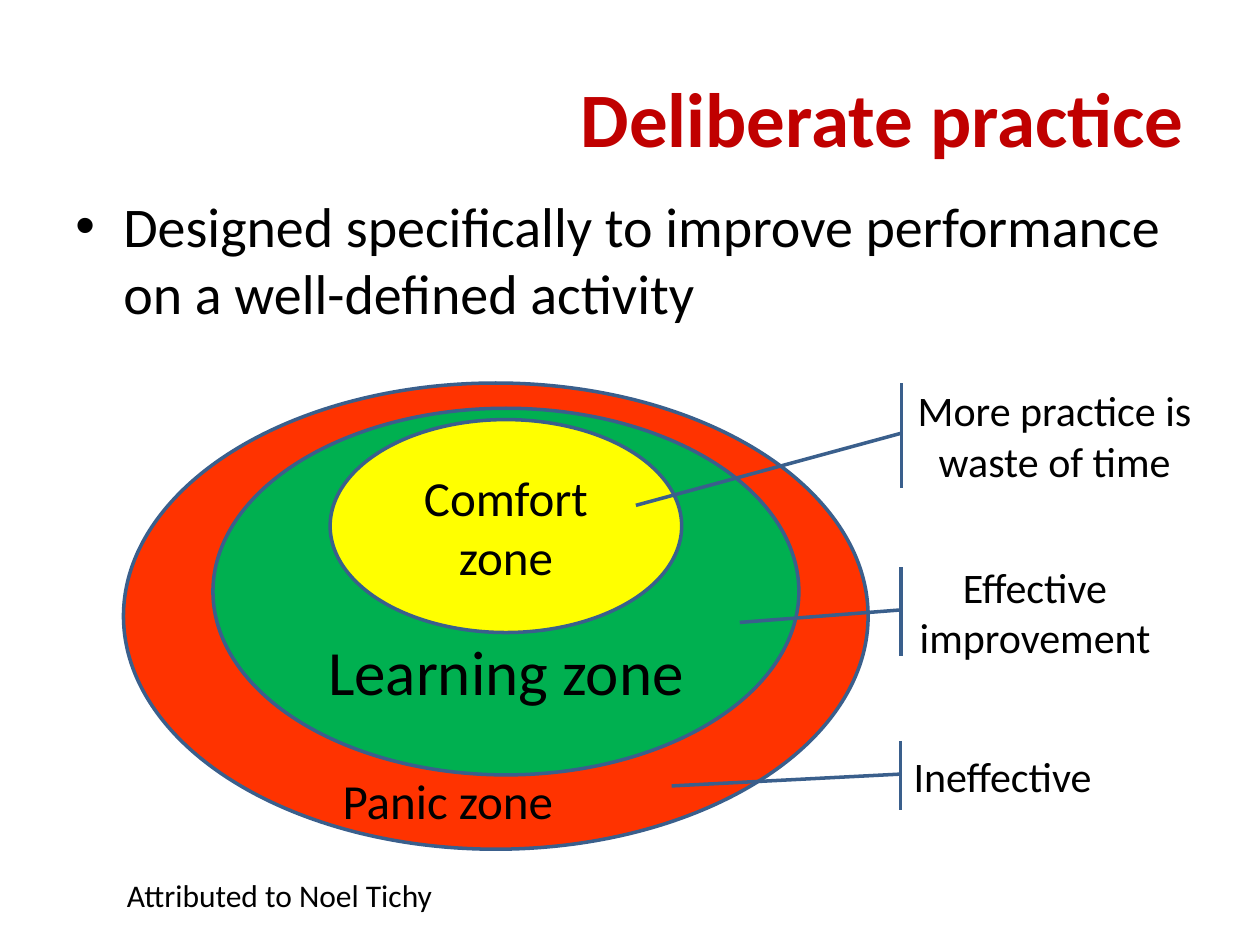
from lxml import etree
from pptx import Presentation
from pptx.dml.color import RGBColor
from pptx.enum.shapes import MSO_SHAPE
from pptx.enum.text import MSO_ANCHOR, PP_ALIGN
from pptx.oxml.ns import qn
from pptx.util import Inches, Pt

OVAL = MSO_SHAPE.OVAL
CALLOUT = MSO_SHAPE.LINE_CALLOUT_1_ACCENT_BAR
TOP, MIDDLE = MSO_ANCHOR.TOP, MSO_ANCHOR.MIDDLE
LEFT, CENTER, RIGHT = PP_ALIGN.LEFT, PP_ALIGN.CENTER, PP_ALIGN.RIGHT

BLACK = RGBColor(0x00, 0x00, 0x00)
DARK_RED = RGBColor(0xC0, 0x00, 0x00)
ORANGE_RED = RGBColor(0xFF, 0x33, 0x00)
GREEN = RGBColor(0x00, 0xB0, 0x50)
YELLOW = RGBColor(0xFF, 0xFF, 0x00)
OUTLINE = RGBColor(0x3A, 0x5F, 0x8C)

CALLOUT_LEFT = 7.13
BAR_Y, BAR_X = 0.48, 0.01


def write(shape, text, size=28, color=BLACK, bold=False, align=CENTER,
          anchor=MIDDLE, wrap=True):
    """Fill a shape with one formatted paragraph and return the paragraph."""
    frame = shape.text_frame
    frame.word_wrap = wrap
    frame.vertical_anchor = anchor
    paragraph = frame.paragraphs[0]
    paragraph.alignment = align
    run = paragraph.add_run()
    run.text = text
    run.font.name = "Calibri"
    run.font.size = Pt(size)
    run.font.bold = bold
    run.font.color.rgb = color
    return paragraph


class ZoneSlide:
    def __init__(self, slide, outline=OUTLINE, outline_width=2):
        self.slide = slide
        self.outline = outline
        self.outline_width = Pt(outline_width)

    def outlined(self, preset, box):
        shape = self.slide.shapes.add_shape(preset, *map(Inches, box))
        shape.shadow.inherit = False
        shape.line.color.rgb = self.outline
        shape.line.width = self.outline_width
        return shape

    def zone(self, box, color, text=None):
        zone = self.outlined(OVAL, box)
        zone.fill.solid()
        zone.fill.fore_color.rgb = color
        if text:
            write(zone, text)

    def callout(self, text, top, width, height, tip_y, tip_x):
        """Add a note whose leader ends at a fraction of its height and width."""
        note = self.outlined(CALLOUT, (CALLOUT_LEFT, top, width, height))
        note.fill.background()
        for index, value in enumerate((BAR_Y, BAR_X, tip_y, tip_x)):
            note.adjustments[index] = value
        write(note, text, size=24)

    def label(self, text, box, **text_format):
        label = self.slide.shapes.add_textbox(*map(Inches, box))
        return write(label, text, **text_format)

    def bullet(self, text, box, size):
        paragraph = self.label(text, box, size=size, align=LEFT, anchor=TOP)
        paragraph.space_before = Pt(0.2 * size)
        properties = paragraph._p.get_or_add_pPr()
        properties.set("marL", str(Inches(0.38)))
        properties.set("indent", str(Inches(-0.38)))
        font = etree.SubElement(properties, qn("a:buFont"))
        font.set("typeface", "Arial")
        mark = etree.SubElement(properties, qn("a:buChar"))
        mark.set("char", "•")


def main():
    deck = Presentation()
    deck.slide_width, deck.slide_height = Inches(10), Inches(7.5)
    page = ZoneSlide(deck.slides.add_slide(deck.slide_layouts[6]))

    page.label("Deliberate practice", (0.5, 0.3, 9, 1.25), size=44,
               color=DARK_RED, bold=True, align=RIGHT)

    page.zone((0.98, 3.04, 5.91, 3.7), ORANGE_RED)
    page.zone((1.69, 3.24, 4.65, 2.91), GREEN)
    page.zone((2.62, 3.33, 2.79, 1.69), YELLOW, "Comfort zone")
    page.label("Learning zone", (2.49, 4.97, 3.05, 0.71), size=36,
               anchor=TOP, wrap=False)
    page.label("Panic zone", (2.62, 6.07, 1.89, 0.57), align=LEFT,
               anchor=TOP, wrap=False)

    page.callout("More practice is waste of time", 3.04, 2.48, 0.83, 1.17, -0.84)
    page.callout("Effective improvement", 4.5, 2.17, 0.71, 0.62, -0.58)
    page.callout("Ineffective ", 5.88, 1.73, 0.55, 0.65, -1.04)

    page.bullet("Designed specifically to improve performance on a "
                "well-defined activity", (0.5, 1.47, 9.15, 1.1), size=32)
    page.label("Attributed to Noel Tichy", (0.91, 6.9, 2.66, 0.4), size=18,
               align=LEFT, anchor=TOP, wrap=False)

    deck.save("out.pptx")


if __name__ == "__main__":
    main()
